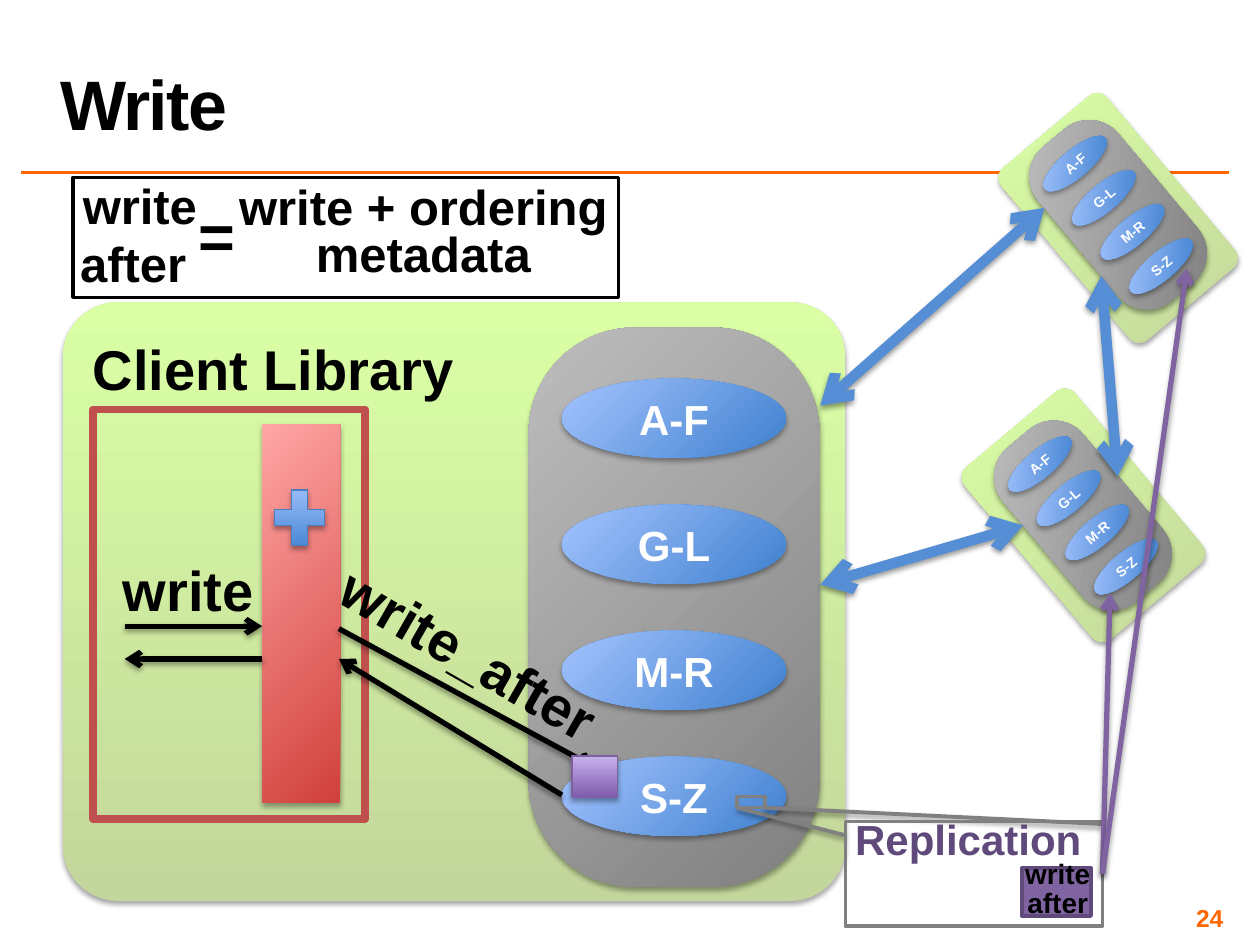
"""Builds the Write slide: client library, partitioned clusters and replication."""
import math

import pptx
import pptx.chart.data
import pptx.dml.color
import pptx.enum.shapes
import pptx.enum.text
import pptx.oxml
import pptx.oxml.ns
import pptx.util
from lxml import etree

Inches, Pt = pptx.util.Inches, pptx.util.Pt
RGBColor = pptx.dml.color.RGBColor
SHAPE = pptx.enum.shapes.MSO_SHAPE
ALIGN = pptx.enum.text.PP_ALIGN
ANCHOR = pptx.enum.text.MSO_ANCHOR

BLACK = RGBColor(0x00, 0x00, 0x00)
WHITE = RGBColor(0xFF, 0xFF, 0xFF)
ORANGE = RGBColor(0xFF, 0x66, 0x00)
BLUE = RGBColor(0x55, 0x8E, 0xD5)
BLUE_EDGE = RGBColor(0x4B, 0x7E, 0xBC)
RED = RGBColor(0xC0, 0x50, 0x4D)
GRAY = RGBColor(0x80, 0x80, 0x80)
PURPLE = RGBColor(0x80, 0x64, 0xA2)
PURPLE_DARK = RGBColor(0x60, 0x4A, 0x7B)
PURPLE_EDGE = RGBColor(0x7D, 0x60, 0xA0)

GREEN_FADE = (RGBColor(0xC3, 0xD6, 0x9B), RGBColor(0xDA, 0xFF, 0xA5), 90)
GRAY_FADE = (GRAY, RGBColor(0xBD, 0xBD, 0xBD), 135)
BLUE_FADE = (RGBColor(0x3F, 0x80, 0xCE), RGBColor(0xA4, 0xC4, 0xFF), 135)
PLUS_FADE = BLUE_FADE[:2] + (90,)
RED_FADE = (RGBColor(0xD1, 0x40, 0x3C), RGBColor(0xFF, 0xA6, 0xA5), 135)
PURPLE_FADE = (RGBColor(0x7F, 0x5B, 0xAB), RGBColor(0xC8, 0xB0, 0xED), 90)

FONT = "Arial"
KEY_RANGES = ["A-F", "G-L", "M-R", "S-Z"]
SMALL = dict(pill_size=(0.83, 1.59), oval_size=(0.63, 0.22), step=0.354, angle=-40, size=8)
CLUSTERS = [
    dict(panel=(3.605, 4.775), panel_size=(6.21, 4.75), pill=(5.35, 4.82),
         pill_size=(2.31, 4.44), oval_size=(1.78, 0.63), step=1, angle=0, size=24),
    dict(panel=(8.875, 1.73), panel_size=(1.09, 1.78), pill=(8.875, 1.705), **SMALL),
    dict(panel=(8.6, 4.09), panel_size=(1.14, 1.78), pill=(8.595, 4.09), **SMALL),
]

BAR = (2.08, 3.37, 0.62, 3)
CLIENT_FRAME = (0.74, 3.25, 2.16, 3.25)
FORMULA_FRAME = (0.58, 1.41, 4.33, 0.95)
REPLICATION = (6.71, 6.52, 2.04, 0.83)
MARKER = (5.85, 6.32, 0.22, 0.09)
PAYLOAD = (8.11, 6.89, 0.55, 0.38)
PLUS = (2.11, 3.81, 0.54, 0.6)
PACKET = (4.54, 6, 0.36, 0.33)

SYNC_ARROWS = [((6.51, 3.22), (8.29, 1.65)), ((8.87, 3.78), (8.74, 2.19)),
               ((6.51, 4.64), (8.12, 4.17))]
WRITE_ARROWS = [((4.46, 6.31), (2.69, 5.23)), ((2.08, 5.23), (0.99, 5.23)),
                ((0.99, 4.97), (2.08, 4.97)), ((2.69, 4.99), (4.72, 6.09))]
CALLOUT_LINES = [((6.71, 6.63), (5.85, 6.41)), ((8.75, 6.54), (6.07, 6.41))]
REPLICA_ENDS = [(8.81, 4.71), (9.42, 2.13)]

LABELS = [
    dict(box=(0.56, 2.61, 3.22, 0.64), lines=["Client Library"], size=32),
    dict(box=(0.87, 4.36, 1.25, 0.64), lines=["write"], size=32, wrap=False),
    dict(box=(6.68, 6.41, 2.01, 0.5), lines=["Replication"], size=24, color=PURPLE_DARK, wrap=False),
    dict(box=(8.03, 6.95, 0.73, 0.4), lines=["write", "after"], size=16, wrap=False,
         spacing=[0.1, 1.0]),
    dict(box=(1.76, 1.44, 3.2, 0.85), lines=["write + ordering", "metadata"], size=28,
         spacing=[0.8, 0.8]),
    dict(box=(0.5, 1.34, 1.22, 1.04), lines=["write", "after "], size=28),
    dict(box=(1.17, 1.51, 1.1, 0.71), lines=["="], size=36),
    dict(box=(2.49, 4.87, 2.47, 0.64), lines=["write_after"], size=32, wrap=False, angle=30),
]


def add_run(paragraph, text, size, color):
    run = paragraph.add_run()
    run.text = text
    run.font.name, run.font.size, run.font.bold = FONT, Pt(size), True
    run.font.color.rgb = color
    return run


def add_shadow(effects, opacity=35):
    shadow = etree.SubElement(effects, pptx.oxml.ns.qn("a:outerShdw"), blurRad=str(Pt(3.1)),
                              dist=str(Pt(1.8)), dir="5400000", rotWithShape="0")
    black = etree.SubElement(shadow, pptx.oxml.ns.qn("a:srgbClr"), val="000000")
    etree.SubElement(black, pptx.oxml.ns.qn("a:alpha"), val=str(opacity * 1000))


def add_block(slide, kind, box, fade=None, fill=None, line=None, width=2, angle=0, corner=None):
    block = slide.shapes.add_shape(kind, *map(Inches, box))
    block.rotation = angle
    block.shadow.inherit = False
    if corner is not None:
        block.adjustments[0] = corner
    if fade:
        block.fill.gradient()
        block.fill.gradient_angle = fade[2]
        for stop, color in zip(block.fill.gradient_stops, fade):
            stop.color.rgb = color
        add_shadow(block._element.spPr.find(pptx.oxml.ns.qn("a:effectLst")))
    elif fill is not None:
        block.fill.solid()
        block.fill.fore_color.rgb = fill
    else:
        block.fill.background()
    if line is not None:
        block.line.color.rgb = line
        block.line.width = Pt(width)
    else:
        block.line.fill.background()
    return block


def add_line(slide, start, end, color, width, ends=(), shadow=True):
    line = slide.shapes.add_connector(pptx.enum.shapes.MSO_CONNECTOR.STRAIGHT,
                                      *map(Inches, start + end))
    line.line.color.rgb = color
    line.line.width = Pt(width)
    properties = line._element.spPr
    for tag in ends:
        etree.SubElement(properties.find(pptx.oxml.ns.qn("a:ln")), pptx.oxml.ns.qn(tag), type="arrow")
    effects = etree.SubElement(properties, pptx.oxml.ns.qn("a:effectLst"))
    if shadow:
        add_shadow(effects, 38)
    return line


def add_label(slide, box, lines, size, color=BLACK, wrap=True, spacing=None, angle=0,
              align=ALIGN.CENTER):
    label = slide.shapes.add_textbox(*map(Inches, box))
    label.rotation = angle
    frame = label.text_frame
    frame.word_wrap = wrap
    for index, text in enumerate(lines):
        paragraph = frame.add_paragraph() if index else frame.paragraphs[0]
        paragraph.alignment = align
        if spacing:
            paragraph.line_spacing = spacing[index]
        add_run(paragraph, text, size, color)
    return frame


def centred(centre, size):
    return (centre[0] - size[0] / 2, centre[1] - size[1] / 2) + size


def add_cluster(slide, panel, panel_size, pill, pill_size, oval_size, step, angle, size):
    add_block(slide, SHAPE.ROUNDED_RECTANGLE, centred(panel, panel_size), GREEN_FADE,
              angle=angle, corner=0.092)
    add_block(slide, SHAPE.ROUNDED_RECTANGLE, centred(pill, pill_size), GRAY_FADE,
              angle=angle, corner=0.365)
    turn = math.radians(angle)
    for index, keys in enumerate(KEY_RANGES):
        offset = (index - (len(KEY_RANGES) - 1) / 2) * step
        centre = (pill[0] - offset * math.sin(turn), pill[1] + offset * math.cos(turn))
        oval = add_block(slide, SHAPE.OVAL, centred(centre, oval_size), BLUE_FADE, angle=angle)
        frame = oval.text_frame
        frame.word_wrap = False
        frame.vertical_anchor = ANCHOR.MIDDLE
        frame.paragraphs[0].alignment = ALIGN.CENTER
        add_run(frame.paragraphs[0], keys, size, WHITE)


def add_title(slide, text):
    title = slide.shapes.title
    title.left, title.top, title.width, title.height = map(Inches, (0.38, 0.02, 9.37, 1.17))
    title.text_frame.vertical_anchor = ANCHOR.BOTTOM
    paragraph = title.text_frame.paragraphs[0]
    paragraph.alignment = ALIGN.LEFT
    paragraph.line_spacing = 0.8
    add_run(paragraph, text, 40, BLACK).font._element.set("spc", "-100")


def main():
    deck = pptx.Presentation()
    deck.slide_width, deck.slide_height = Inches(10), Inches(7.5)
    slide = deck.slides.add_slide(deck.slide_layouts[5])
    add_line(slide, (0.17, 1.37), (9.75, 1.37), ORANGE, 2, shadow=False)
    add_title(slide, "Write")
    for cluster in CLUSTERS:
        add_cluster(slide, **cluster)
    for start, end in SYNC_ARROWS:
        add_line(slide, start, end, BLUE, 6, ("a:headEnd", "a:tailEnd"))
    add_block(slide, SHAPE.RECTANGLE, BAR, RED_FADE)
    add_block(slide, SHAPE.RECTANGLE, CLIENT_FRAME, line=RED, width=4.5)
    for start, end in WRITE_ARROWS:
        add_line(slide, start, end, BLACK, 3, ("a:tailEnd",))
    for start, end in CALLOUT_LINES:
        add_line(slide, start, end, GRAY, 2.25)
    replication = add_block(slide, SHAPE.RECTANGLE, REPLICATION, line=GRAY)
    add_block(slide, SHAPE.RECTANGLE, MARKER, line=GRAY)
    add_block(slide, SHAPE.RECTANGLE, PAYLOAD, fill=PURPLE, line=PURPLE_DARK)
    add_block(slide, SHAPE.RECTANGLE, FORMULA_FRAME, line=BLACK)
    for end in REPLICA_ENDS:
        arrow = add_line(slide, (8.75, 6.94), end, PURPLE, 3, ("a:tailEnd",))
        arrow.begin_connect(replication, 3)
    add_block(slide, SHAPE.MATH_PLUS, PLUS, PLUS_FADE, line=BLUE_EDGE, width=0.75)
    add_block(slide, SHAPE.RECTANGLE, PACKET, PURPLE_FADE, line=PURPLE_EDGE, width=0.75)
    for label in LABELS:
        add_label(slide, **label)
    number = add_label(slide, (7.42, 7.17, 2.33, 0.23), ["24"], 14, ORANGE, align=ALIGN.RIGHT)
    number.vertical_anchor = ANCHOR.MIDDLE
    number.margin_left = number.margin_right = number.margin_top = number.margin_bottom = Inches(0.04)
    deck.save("out.pptx")


if __name__ == "__main__":
    main()
